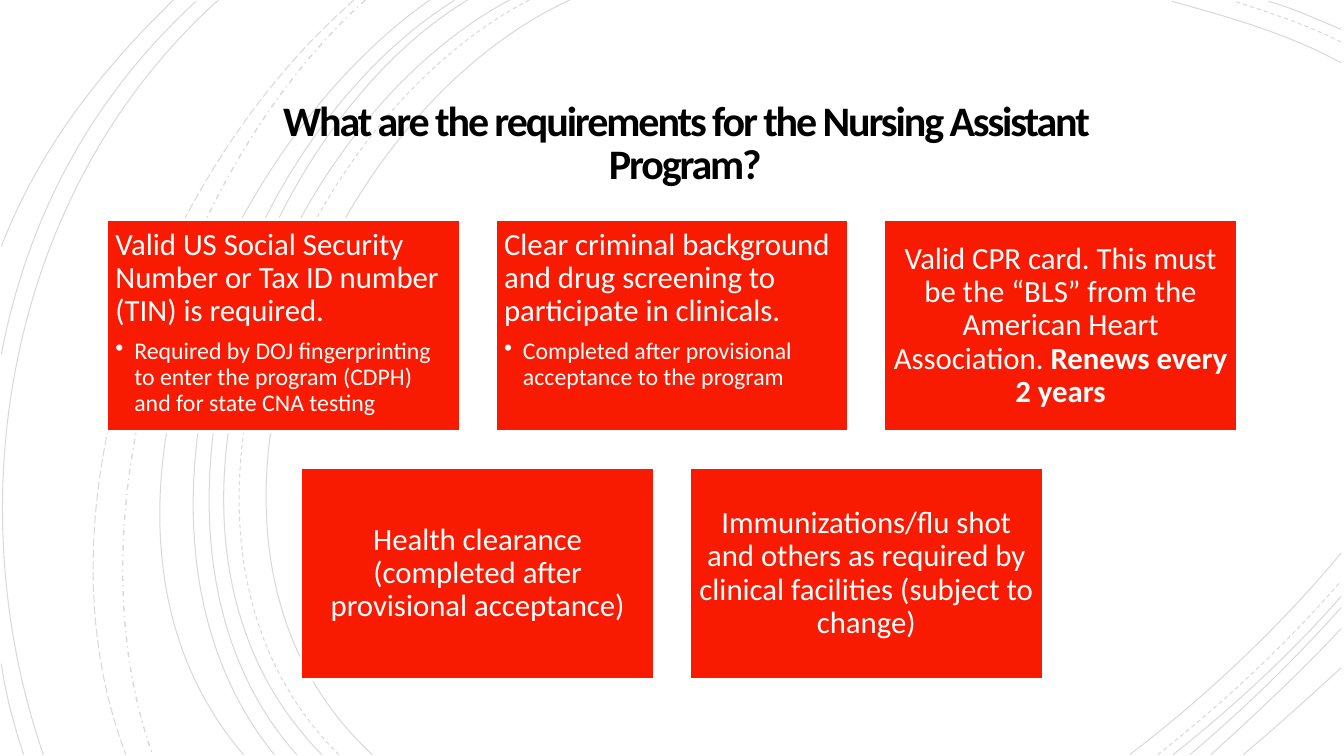
from dataclasses import dataclass

from lxml.etree import SubElement
from pptx import Presentation
from pptx.dml.color import RGBColor
from pptx.enum.dml import MSO_LINE
from pptx.enum.shapes import MSO_SHAPE
from pptx.enum.text import MSO_ANCHOR, MSO_AUTO_SIZE, PP_ALIGN
from pptx.oxml.ns import qn
from pptx.util import Pt


@dataclass(frozen=True)
class Theme:
    font: str = "Calibri"
    title_size: float = 30
    card_size: float = 22
    bullet_size: float = 17
    black: RGBColor = RGBColor(0, 0, 0)
    white: RGBColor = RGBColor(255, 255, 255)
    red: RGBColor = RGBColor(0xF8, 0x1B, 0x02)
    arc_opacity: int = 15


THEME = Theme()
SLIDE_WIDTH, SLIDE_HEIGHT = 960, 540
CARD_WIDTH, CARD_HEIGHT, CARD_GAP = 252.4, 151.4, 25.2
CARDS_TOP, ROW_PITCH = 157, 177
CARD_INSET, BULLET_INDENT = 6.3, 13.5

# Bezier points in points: start, two controls, end
ARCS = {
    MSO_LINE.SOLID: [
        [(407, 0), (227, 83), (103, 389), (266, 539)],
        [(958, 45), (920, 24), (877, 12), (837, 1)],
        [(807, 539), (862, 497), (914, 448), (958, 395)],
        [(364, 0), (194, 91), (79, 387), (230, 539)],
        [(958, 21), (941, 14), (924, 6), (906, 1)],
        [(838, 539), (881, 505), (922, 467), (958, 426)],
        [(334, 0), (176, 96), (79, 390), (212, 539)],
        [(850, 539), (888, 507), (924, 472), (958, 434)],
        [(325, 0), (166, 99), (70, 384), (196, 539)],
        [(865, 539), (897, 510), (929, 480), (958, 449)],
        [(307, 0), (156, 106), (38, 381), (174, 539)],
        [(888, 539), (912, 519), (935, 498), (958, 477)],
        [(156, 0), (8, 133), (-33, 353), (31, 539)],
        [(140, 1), (66, 69), (20, 154), (1, 253)],
        [(1, 474), (4, 496), (10, 518), (17, 539)],
        [(124, 0), (72, 50), (27, 108), (1, 176)],
    ],
    MSO_LINE.DASH: [
        [(378, 0), (205, 90), (89, 387), (242, 539)],
        [(958, 30), (934, 18), (907, 9), (882, 1)],
        [(827, 539), (873, 503), (918, 461), (958, 415)],
    ],
    MSO_LINE.DASH_DOT: [[(261, 0), (127, 120), (47, 366), (109, 539)]],
    MSO_LINE.LONG_DASH: [[(253, 0), (113, 122), (21, 359), (90, 539)]],
}

TITLE = "What are the requirements for the Nursing Assistant Program?"

# Each card: plain text, bold ending, bullet
CARD_ROWS = [
    [
        ("Valid US Social Security Number or Tax ID number (TIN) is required.", "",
         "Required by DOJ fingerprinting to enter the program (CDPH) and for state CNA testing"),
        ("Clear criminal background and drug screening to participate in clinicals.", "",
         "Completed after provisional acceptance to the program"),
        ("Valid CPR card. This must be the “BLS” from the American Heart Association. ",
         "Renews every 2 years", ""),
    ],
    [
        ("Health clearance (completed after provisional acceptance)", "", ""),
        ("Immunizations/flu shot and others as required by clinical facilities "
         "(subject to change)", "", ""),
    ],
]


def add_run(paragraph, text, size, color, bold=False):
    run = paragraph.add_run()
    run.text = text
    run.font.name = THEME.font
    run.font.size = Pt(size)
    run.font.bold = bold
    run.font.color.rgb = color
    return run


def format_frame(frame, inset, anchor):
    frame.word_wrap = True
    frame.auto_size = MSO_AUTO_SIZE.NONE
    frame.vertical_anchor = anchor
    frame.margin_left = frame.margin_right = Pt(inset)
    frame.margin_top = frame.margin_bottom = Pt(inset)


def format_paragraph(paragraph, align, line_spacing, space_after):
    paragraph.alignment = align
    paragraph.line_spacing = line_spacing
    paragraph.space_before = Pt(0)
    paragraph.space_after = Pt(space_after)


def add_arc(slide, points, dash):
    """Draw one faint cubic curve through its start, controls and end."""
    builder = slide.shapes.build_freeform(*points[0], scale=Pt(1))
    builder.add_line_segments(points[1:], close=False)
    arc = builder.convert_to_shape()
    outline = next(arc._element.iter(qn("a:path")))
    curve = SubElement(outline, qn("a:cubicBezTo"))
    for segment in outline.findall(qn("a:lnTo")):
        curve.append(segment[0])
        outline.remove(segment)
    arc.shadow.inherit = False
    arc.fill.background()
    arc.line.color.rgb = THEME.black
    arc.line.width = Pt(1 if dash == MSO_LINE.DASH_DOT else 0.75)
    arc.line.dash_style = dash
    color = next(arc.line._ln.iter(qn("a:srgbClr")))
    SubElement(color, qn("a:alpha"), val=str(THEME.arc_opacity * 1000))


def add_title(slide):
    title = slide.shapes.title
    slide.shapes._spTree.append(title._element)  # bring in front of the arcs
    title.left, title.top = Pt(138.2), Pt(62.6)
    title.width, title.height = Pt(702.7), Pt(82.8)
    format_frame(title.text_frame, 18, MSO_ANCHOR.MIDDLE)
    paragraph = title.text_frame.paragraphs[0]
    format_paragraph(paragraph, PP_ALIGN.CENTER, 0.85, 0)
    run = add_run(paragraph, TITLE, THEME.title_size, THEME.black, bold=True)
    run.font._element.set("spc", "-150")


def add_bullet(frame, text):
    paragraph = frame.add_paragraph()
    paragraph.level = 1
    format_paragraph(paragraph, PP_ALIGN.LEFT, 0.9, 2.6)
    properties = paragraph._p.get_or_add_pPr()
    properties.set("marL", str(Pt(BULLET_INDENT)))
    properties.set("indent", str(-Pt(BULLET_INDENT)))
    SubElement(properties, qn("a:buChar"), char="•")
    add_run(paragraph, text, THEME.bullet_size, THEME.white)


def add_card(slide, left, top, text, bold_ending, bullet):
    card = slide.shapes.add_shape(
        MSO_SHAPE.RECTANGLE, Pt(left), Pt(top), Pt(CARD_WIDTH), Pt(CARD_HEIGHT))
    card.shadow.inherit = False
    card.fill.solid()
    card.fill.fore_color.rgb = THEME.red
    card.line.color.rgb = THEME.white
    card.line.width = Pt(2)
    frame = card.text_frame
    format_frame(frame, CARD_INSET, MSO_ANCHOR.TOP if bullet else MSO_ANCHOR.MIDDLE)
    paragraph = frame.paragraphs[0]
    format_paragraph(paragraph, PP_ALIGN.LEFT if bullet else PP_ALIGN.CENTER, 0.9, 7.7)
    add_run(paragraph, text, THEME.card_size, THEME.white)
    if bold_ending:
        add_run(paragraph, bold_ending, THEME.card_size, THEME.white, bold=True)
    if bullet:
        add_bullet(frame, bullet)


def add_card_row(slide, top, cards):
    """Place equally spaced cards centred across the slide."""
    pitch = CARD_WIDTH + CARD_GAP
    left = (SLIDE_WIDTH - len(cards) * pitch + CARD_GAP) / 2
    for column, card in enumerate(cards):
        add_card(slide, left + column * pitch, top, *card)


def main():
    presentation = Presentation()
    presentation.slide_width = Pt(SLIDE_WIDTH)
    presentation.slide_height = Pt(SLIDE_HEIGHT)
    slide = presentation.slides.add_slide(presentation.slide_layouts[5])
    for dash, arcs in ARCS.items():
        for points in arcs:
            add_arc(slide, points, dash)
    add_title(slide)
    for row, cards in enumerate(CARD_ROWS):
        add_card_row(slide, CARDS_TOP + row * ROW_PITCH, cards)
    presentation.save("out.pptx")


if __name__ == "__main__":
    main()
